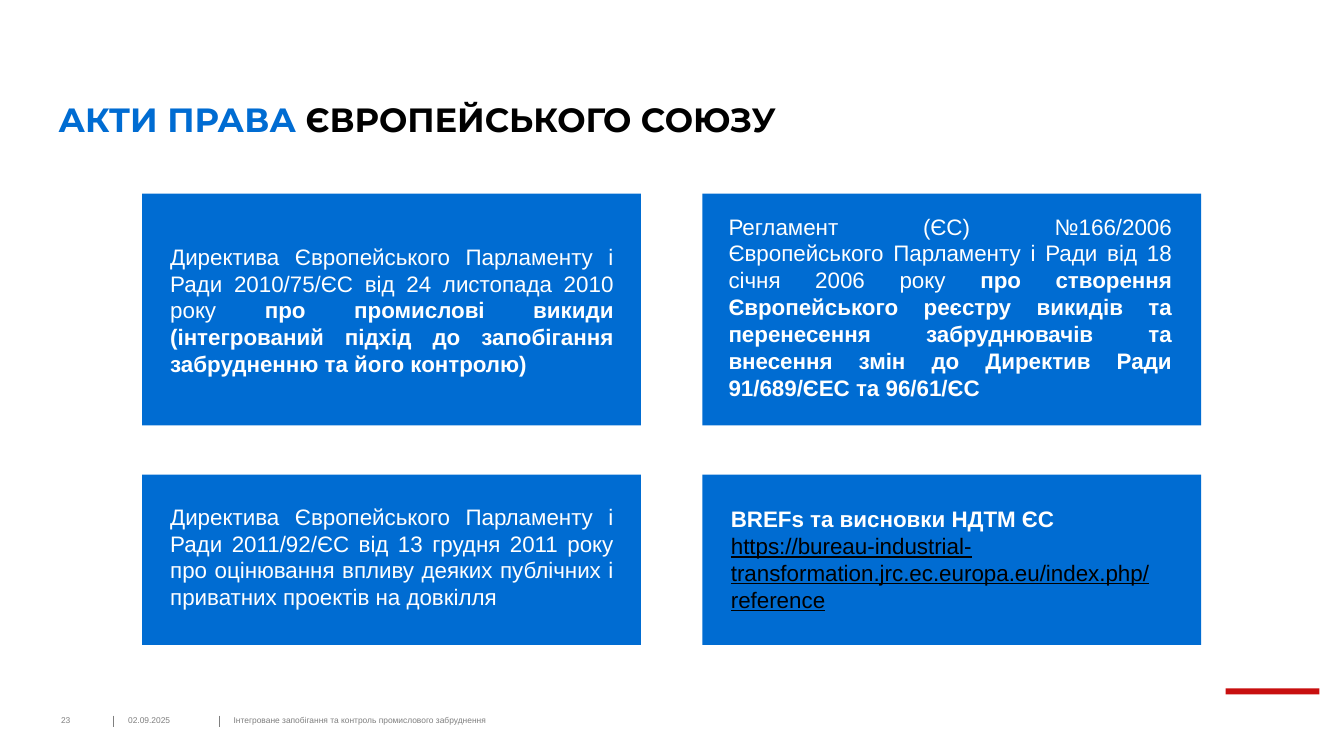
from lxml.etree import SubElement
from pptx import Presentation
from pptx.dml.color import RGBColor
from pptx.enum.shapes import MSO_CONNECTOR, MSO_SHAPE
from pptx.enum.text import MSO_ANCHOR, PP_ALIGN
from pptx.oxml.ns import qn
from pptx.util import Cm, Pt

BLUE, RED, GREY, BLACK, WHITE = "006CD2", "C80F0F", "7F7F7F", "000000", "FFFFFF"


def rgb(value):
    return RGBColor.from_string(value)


def add_text(s, box, paragraphs, size, font="Arial", anchor=MSO_ANCHOR.TOP,
             align=PP_ALIGN.LEFT, spacing=None):
    """Each paragraph is a list of (text, colour, bold, underline) runs."""
    tf = s.shapes.add_textbox(*map(Cm, box)).text_frame
    tf.word_wrap = True
    tf.vertical_anchor = anchor
    tf.margin_left = tf.margin_top = tf.margin_right = tf.margin_bottom = 0
    for i, runs in enumerate(paragraphs):
        p = tf.add_paragraph() if i else tf.paragraphs[0]
        p.alignment = align
        if spacing:
            p.line_spacing = spacing
        for text, color, bold, underline in runs:
            r = p.add_run()
            r.text = text
            r.font.name, r.font.size = font, Pt(size)
            r.font.bold, r.font.underline = bold, underline
            r.font.color.rgb = rgb(color)


prs = Presentation()
prs.slide_width, prs.slide_height = Cm(33.87), Cm(19.05)
s = prs.slides.add_slide(prs.slide_layouts[6])

# Title
add_text(s, (1.47, 1.02, 20.4, 2.51),
         [[("АКТИ ПРАВА ", BLUE, True, False),
           ("ЄВРОПЕЙСЬКОГО СОЮЗУ", BLACK, True, False)]],
         24, "Montserrat", MSO_ANCHOR.BOTTOM, spacing=0.9)

# Four blue cards and the red accent bar
cards = [(x, y, 12.57, h, BLUE)
         for y, h in ((4.88, 5.84), (11.96, 4.29)) for x in (3.58, 17.7)]
for x, y, w, h, color in cards + [(30.89, 17.35, 2.36, 0.15, RED)]:
    sp = s.shapes.add_shape(MSO_SHAPE.RECTANGLE, Cm(x), Cm(y), Cm(w), Cm(h))
    sp.shadow.inherit = False
    sp.fill.solid()
    sp.fill.fore_color.rgb = rgb(color)
    sp.line.fill.background()

# Card texts: left, top, height, paragraphs
card_texts = [
    (4.29, 6.12, 3.81, [[
        ("Директива Європейського Парламенту і Ради 2010/75/ЄС від 24 листопада 2010 року ",
         WHITE, False, False),
        ("про промислові викиди (інтегрований підхід до запобігання забрудненню "
         "та його контролю)", WHITE, True, False)]]),
    (18.36, 5.36, 4.83, [[
        ("Регламент (ЄC) №166/2006 Європейського Парламенту і Ради від 18 січня 2006 року ",
         WHITE, False, False),
        ("про створення Європейського реєстру викидів та перенесення забруднювачів "
         "та внесення змін до Директив Ради 91/689/ЄEC та 96/61/ЄC",
         WHITE, True, False)]]),
    (4.29, 12.67, 3.4, [[
        ("Директива Європейського Парламенту і Ради 2011/92/ЄС від 13 грудня 2011 року "
         "про оцінювання впливу деяких публічних і приватних проектів на довкілля",
         WHITE, False, False)]]),
    (18.42, 12.73, 3.2, [
        [("BREFs та висновки НДТМ ЄС", WHITE, True, False)],
        [("https://bureau-industrial-transformation.jrc.ec.europa.eu/index.php/reference",
          BLACK, False, True)]]),
]
for x, y, h, paragraphs in card_texts:
    add_text(s, (x, y, 11.18, h), paragraphs, 16, align=PP_ALIGN.JUSTIFY)

# Footer: page number, date, topic
for x, w, text in ((1.54, 1.2, "23"), (3.23, 2.01, "02.09.2025"),
                   (5.89, 19, "Інтегроване запобігання та контроль промислового забруднення")):
    add_text(s, (x, 18.03, w, 0.25), [[(text, GREY, False, False)]], 6,
             anchor=MSO_ANCHOR.MIDDLE)

# Footer dividers
for x in (2.87, 5.54):
    line = s.shapes.add_connector(MSO_CONNECTOR.STRAIGHT, Cm(x), Cm(18.03), Cm(x), Cm(18.31))
    line.line.color.rgb = rgb(GREY)
    line.line.width = Pt(0.75)
    SubElement(line._element.spPr, qn("a:effectLst"))

prs.save("out.pptx")
